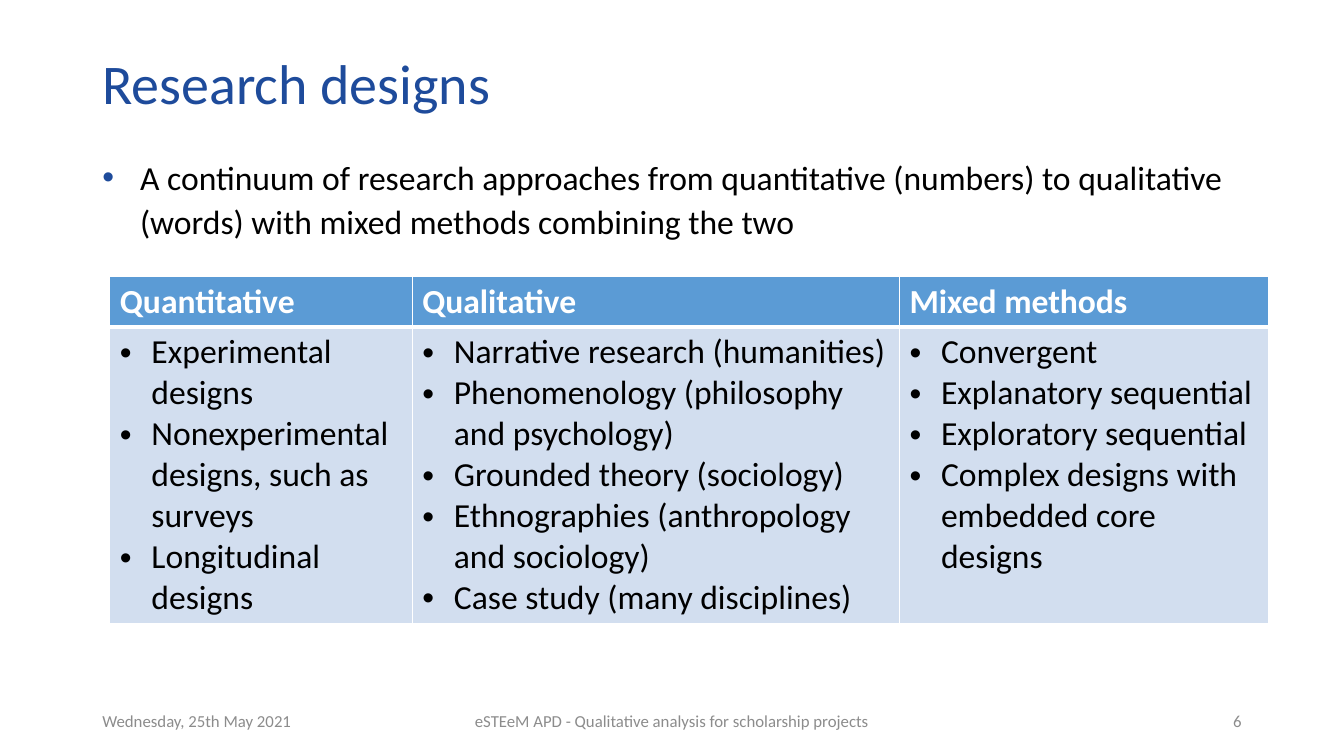
import pptx
import pptx.dml.color
import pptx.enum.text
import pptx.oxml
import pptx.oxml.ns
import pptx.util

Pt = pptx.util.Pt
RGBColor = pptx.dml.color.RGBColor
ALIGN = pptx.enum.text.PP_ALIGN
ANCHOR = pptx.enum.text.MSO_ANCHOR
NO_FIT = pptx.enum.text.MSO_AUTO_SIZE.NONE
NAMESPACE = pptx.oxml.ns.nsdecls("a")

NAVY = RGBColor(0x1E, 0x4B, 0x9B)
BLUE = RGBColor(0x5B, 0x9B, 0xD5)
PALE_BLUE = RGBColor(0xD2, 0xDE, 0xEF)
GREY = RGBColor(0x8C, 0x8C, 0x8C)
BLACK = RGBColor(0, 0, 0)
WHITE = RGBColor(255, 255, 255)

TITLE_FONT = {"name": "Calibri", "size": Pt(40), "color": NAVY}
BODY_FONT = {"name": "Calibri", "size": Pt(24), "color": BLACK, "bold": False}
HEADER_FONT = {**BODY_FONT, "color": WHITE, "bold": True}
FOOTER_FONT = {"name": "Calibri", "size": Pt(12), "color": GREY}

DESIGNS = [
    ("Quantitative", 216, [
        "Experimental designs",
        "Nonexperimental designs, such as surveys",
        "Longitudinal designs",
    ]),
    ("Qualitative", 348, [
        "Narrative research (humanities)",
        "Phenomenology (philosophy and psychology)",
        "Grounded theory (sociology)",
        "Ethnographies (anthropology and sociology)",
        "Case study (many disciplines)",
    ]),
    ("Mixed methods", 264, [
        "Convergent",
        "Explanatory sequential",
        "Exploratory sequential",
        "Complex designs with embedded core designs",
    ]),
]


def write(paragraph, text, style):
    run = paragraph.add_run()
    run.text = text
    for attribute, value in style.items():
        if attribute == "color":
            run.font.color.rgb = value
        else:
            setattr(run.font, attribute, value)


def add_bullet(paragraph, indent, color):
    properties = paragraph._p.get_or_add_pPr()
    properties.set("marL", str(Pt(indent)))
    properties.set("indent", str(-Pt(indent)))
    for xml in (
        f'<a:buClr {NAMESPACE}><a:srgbClr val="{color}"/></a:buClr>',
        f'<a:buFont {NAMESPACE} typeface="Arial"/>',
        f'<a:buChar {NAMESPACE} char="•"/>',
    ):
        properties.append(pptx.oxml.parse_xml(xml))


def add_borders(cell, widths):
    properties = cell._tc.get_or_add_tcPr()
    for side, width in zip("LRTB", widths):
        properties.append(pptx.oxml.parse_xml(
            f'<a:ln{side} {NAMESPACE} w="{Pt(width)}"><a:solidFill>'
            f'<a:srgbClr val="{WHITE}"/></a:solidFill></a:ln{side}>'))


def add_text_box(slide, left, top, width, height, anchor):
    frame = slide.shapes.add_textbox(
        Pt(left), Pt(top), Pt(width), Pt(height)).text_frame
    frame.word_wrap = True
    frame.vertical_anchor = anchor
    return frame


def place_title(slide, left, top, width, height):
    title = slide.shapes.title
    title.left, title.top = Pt(left), Pt(top)
    title.width, title.height = Pt(width), Pt(height)
    title.text_frame.auto_size = NO_FIT
    title.text_frame.vertical_anchor = ANCHOR.MIDDLE
    heading = title.text_frame.paragraphs[0]
    heading.alignment = ALIGN.LEFT
    heading.line_spacing = 0.9
    write(heading, "Research designs", TITLE_FONT)


def add_summary(slide, left, top, width, height):
    frame = add_text_box(slide, left, top, width, height, ANCHOR.TOP)
    summary = frame.paragraphs[0]
    add_bullet(summary, 27, NAVY)
    summary.line_spacing = 1.08
    write(summary, "A continuum of research approaches from quantitative (numbers) "
          "to qualitative (words) with mixed methods combining the two", BODY_FONT)


def add_designs_table(slide, left, top, width, height):
    header_height = 36
    table = slide.shapes.add_table(
        2, len(DESIGNS), Pt(left), Pt(top), Pt(width), Pt(height)).table
    table.rows[0].height = Pt(header_height)
    table.rows[1].height = Pt(height - header_height)

    for column, (approach, column_width, designs) in enumerate(DESIGNS):
        table.columns[column].width = Pt(column_width)

        # Header cell with a heavy rule beneath it
        header = table.cell(0, column)
        add_borders(header, (1, 1, 1, 3))
        header.fill.solid()
        header.fill.fore_color.rgb = BLUE
        write(header.text_frame.paragraphs[0], approach, HEADER_FONT)

        # Bulleted list of designs
        body = table.cell(1, column)
        add_borders(body, (1, 1, 3, 1))
        body.fill.solid()
        body.fill.fore_color.rgb = PALE_BLUE
        for index, design in enumerate(designs):
            frame = body.text_frame
            item = frame.add_paragraph() if index else frame.paragraphs[0]
            add_bullet(item, 22.5, BLACK)
            write(item, design, BODY_FONT)


def add_footer(slide, left, top, width, height):
    side_width, centre_width = 216, 324
    parts = [
        ("Wednesday, 25th May 2021", left, side_width, ALIGN.LEFT),
        ("eSTEeM APD - Qualitative analysis for scholarship projects",
         left + (width - centre_width) / 2, centre_width, ALIGN.CENTER),
        ("6", left + width - side_width, side_width, ALIGN.RIGHT),
    ]
    for text, part_left, part_width, alignment in parts:
        frame = add_text_box(slide, part_left, top, part_width, height, ANCHOR.MIDDLE)
        frame.paragraphs[0].alignment = alignment
        write(frame.paragraphs[0], text, FOOTER_FONT)


def main():
    presentation = pptx.Presentation()
    presentation.slide_width, presentation.slide_height = Pt(960), Pt(540)
    slide = presentation.slides.add_slide(presentation.slide_layouts[5])
    margin, content_width = 66, 828
    place_title(slide, margin, 29, content_width, 65)
    add_summary(slide, margin, 106.5, content_width, 80)
    add_designs_table(slide, 78.5, 197.5, content_width, 248)
    add_footer(slide, margin, 500.5, content_width, 28.75)
    presentation.save("out.pptx")


if __name__ == "__main__":
    main()
